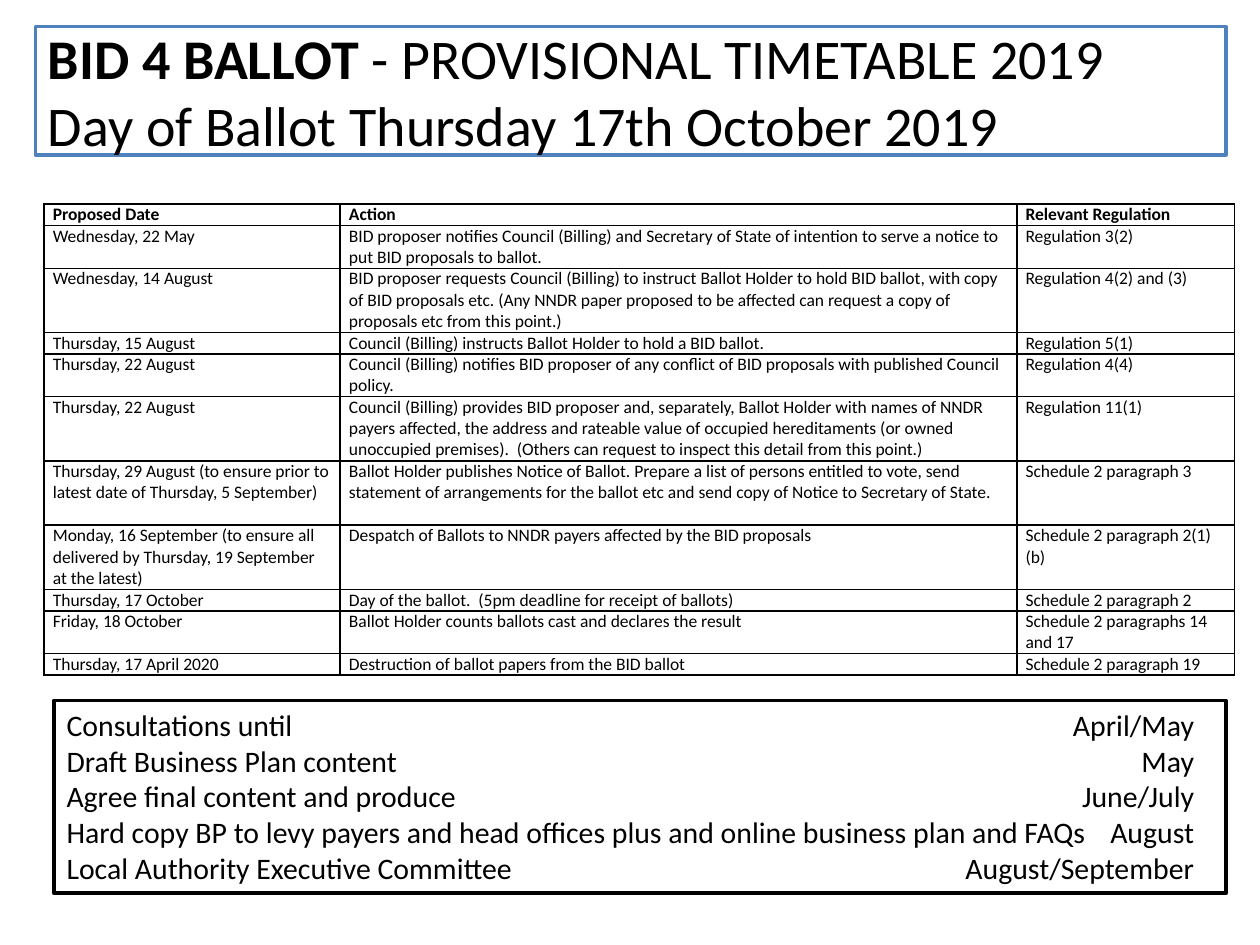
from lxml import etree
from pptx import Presentation
from pptx.dml.color import RGBColor
from pptx.enum.shapes import MSO_SHAPE
from pptx.enum.text import MSO_ANCHOR, MSO_AUTO_SIZE, PP_ALIGN
from pptx.oxml import parse_xml
from pptx.oxml.ns import nsdecls, qn
from pptx.util import Inches, Pt

RECTANGLE = MSO_SHAPE.RECTANGLE
LEFT = PP_ALIGN.LEFT
MIDDLE, TOP = MSO_ANCHOR.MIDDLE, MSO_ANCHOR.TOP
NO_AUTOFIT = MSO_AUTO_SIZE.NONE

FONT = "Calibri"
COLORS = {"text": "000000", "title_line": "4F81BD", "line": "000000"}

# Content
TITLE_LINES = [
    [("BID 4 BALLOT ", True), ("- PROVISIONAL TIMETABLE 2019", False)],
    [("Day of Ballot Thursday 17th October 2019", False)],
]
HEADER = ("Proposed Date", "Action", "Relevant Regulation")
# Each row: height in text lines, then its three cells
TIMETABLE = [
    (1, HEADER),
    (2, ("Wednesday, 22 May",
         "BID proposer notifies Council (Billing) and Secretary of State of intention "
         "to serve a notice to put BID proposals to ballot.",
         "Regulation 3(2)")),
    (3, ("Wednesday, 14 August",
         "BID proposer requests Council (Billing) to instruct Ballot Holder to hold BID "
         "ballot, with copy of BID proposals etc. (Any NNDR paper proposed to be affected "
         "can request a copy of proposals etc from this point.)",
         "Regulation 4(2) and (3)")),
    (1, ("Thursday, 15 August",
         "Council (Billing) instructs Ballot Holder to hold a BID ballot.",
         "Regulation 5(1)")),
    (2, ("Thursday, 22 August",
         "Council (Billing) notifies BID proposer of any conflict of BID proposals with "
         "published Council policy.",
         "Regulation 4(4)")),
    (3, ("Thursday, 22 August",
         "Council (Billing) provides BID proposer and, separately, Ballot Holder with names "
         "of NNDR payers affected, the address and rateable value of occupied hereditaments "
         "(or owned unoccupied premises).  (Others can request to inspect this detail from "
         "this point.)",
         "Regulation 11(1)")),
    (3, ("Thursday, 29 August (to ensure prior to latest date of Thursday, 5 September)",
         "Ballot Holder publishes Notice of Ballot. Prepare a list of persons entitled to "
         "vote, send statement of arrangements for the ballot etc and send copy of Notice "
         "to Secretary of State.",
         "Schedule 2 paragraph 3")),
    (3, ("Monday, 16 September (to ensure all delivered by Thursday, 19 September at the latest)",
         "Despatch of Ballots to NNDR payers affected by the BID proposals",
         "Schedule 2 paragraph 2(1)(b)")),
    (1, ("Thursday, 17 October",
         "Day of the ballot.  (5pm deadline for receipt of ballots)",
         "Schedule 2 paragraph 2")),
    (2, ("Friday, 18 October",
         "Ballot Holder counts ballots cast and declares the result",
         "Schedule 2 paragraphs 14 and 17")),
    (1, ("Thursday, 17 April 2020",
         "Destruction of ballot papers from the BID ballot",
         "Schedule 2 paragraph 19")),
]
MILESTONES = [
    ("Consultations until", "April/May"),
    ("Draft Business Plan content", "May"),
    ("Agree final content and produce", "June/July"),
    ("Hard copy BP to levy payers and head offices plus and online business plan and FAQs",
     "August"),
    ("Local Authority Executive Committee", "August/September"),
]

# Layout in inches
TITLE_BOX = (0.28, 0.21, 9.45, 1.02)
TABLE_LEFT, TABLE_TOP = 0.35, 1.62
COLUMN_WIDTHS = (2.35, 5.37, 1.73)
LINE_HEIGHT = 0.17
CELL_MARGIN = 0.07
MILESTONE_BOX = (0.43, 5.56, 9.3, 1.53)
MONTH_TAB = 8.95


def color(name):
    return RGBColor.from_string(COLORS[name])


def add_run(paragraph, text, size, bold=False):
    run = paragraph.add_run()
    run.text = text
    run.font.name = FONT
    run.font.size = Pt(size)
    run.font.bold = bold
    run.font.color.rgb = color("text")


def outline(shape, color_name, width):
    shape.fill.background()
    shape.line.color.rgb = color(color_name)
    shape.line.width = Pt(width)


def add_borders(cell):
    properties = cell._tc.get_or_add_tcPr()
    for index, side in enumerate(("lnL", "lnR", "lnT", "lnB")):
        properties.insert(index, parse_xml(
            f'<a:{side} {nsdecls("a")} w="{Pt(1)}"><a:solidFill>'
            f'<a:srgbClr val="{COLORS["line"]}"/></a:solidFill></a:{side}>'))


def add_right_tab(paragraph, position):
    tabs = etree.SubElement(paragraph._p.get_or_add_pPr(), qn("a:tabLst"))
    etree.SubElement(tabs, qn("a:tab"), pos=str(Inches(position)), algn="r")


def add_title(slide):
    title = slide.shapes.title
    title.left, title.top, title.width, title.height = map(Inches, TITLE_BOX)
    outline(title, "title_line", 2)
    frame = title.text_frame
    frame.auto_size = NO_AUTOFIT
    frame.vertical_anchor = MIDDLE
    paragraph = frame.paragraphs[0]
    paragraph.alignment = LEFT
    for index, line in enumerate(TITLE_LINES):
        if index:
            paragraph.add_line_break()
        for text, bold in line:
            add_run(paragraph, text, 32, bold)


def add_timetable(slide):
    total_lines = sum(lines for lines, _ in TIMETABLE)
    table = slide.shapes.add_table(
        len(TIMETABLE), len(HEADER), Inches(TABLE_LEFT), Inches(TABLE_TOP),
        Inches(sum(COLUMN_WIDTHS)), Inches(total_lines * LINE_HEIGHT)).table
    table.horz_banding = False
    for column, width in zip(table.columns, COLUMN_WIDTHS):
        column.width = Inches(width)
    for row_index, (lines, texts) in enumerate(TIMETABLE):
        table.rows[row_index].height = Inches(lines * LINE_HEIGHT)
        for column_index, text in enumerate(texts):
            cell = table.cell(row_index, column_index)
            cell.margin_left = cell.margin_right = Inches(CELL_MARGIN)
            cell.margin_top = cell.margin_bottom = 0
            cell.fill.background()
            add_borders(cell)
            add_run(cell.text_frame.paragraphs[0], text, 10, bold=row_index == 0)


def add_milestones(slide):
    box = slide.shapes.add_shape(RECTANGLE, *map(Inches, MILESTONE_BOX))
    box.shadow.inherit = False
    outline(box, "line", 2.25)
    frame = box.text_frame
    frame.word_wrap = True
    frame.vertical_anchor = TOP
    for index, (task, month) in enumerate(MILESTONES):
        paragraph = frame.add_paragraph() if index else frame.paragraphs[0]
        paragraph.alignment = LEFT
        add_right_tab(paragraph, MONTH_TAB)
        add_run(paragraph, f"{task}\t{month}", 17)


def main():
    presentation = Presentation()
    presentation.slide_width, presentation.slide_height = Inches(10), Inches(7.5)
    slide = presentation.slides.add_slide(presentation.slide_layouts[5])
    add_timetable(slide)
    add_title(slide)
    add_milestones(slide)
    presentation.save("out.pptx")


if __name__ == "__main__":
    main()
